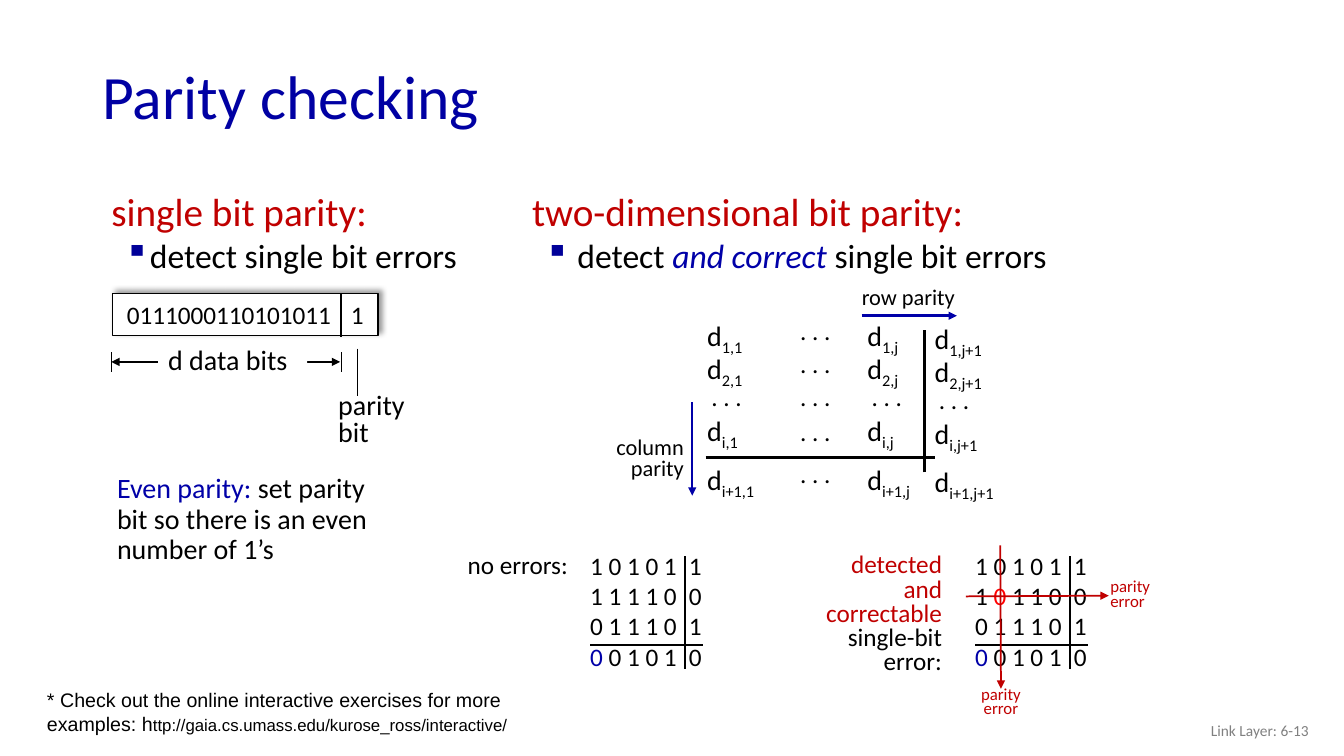
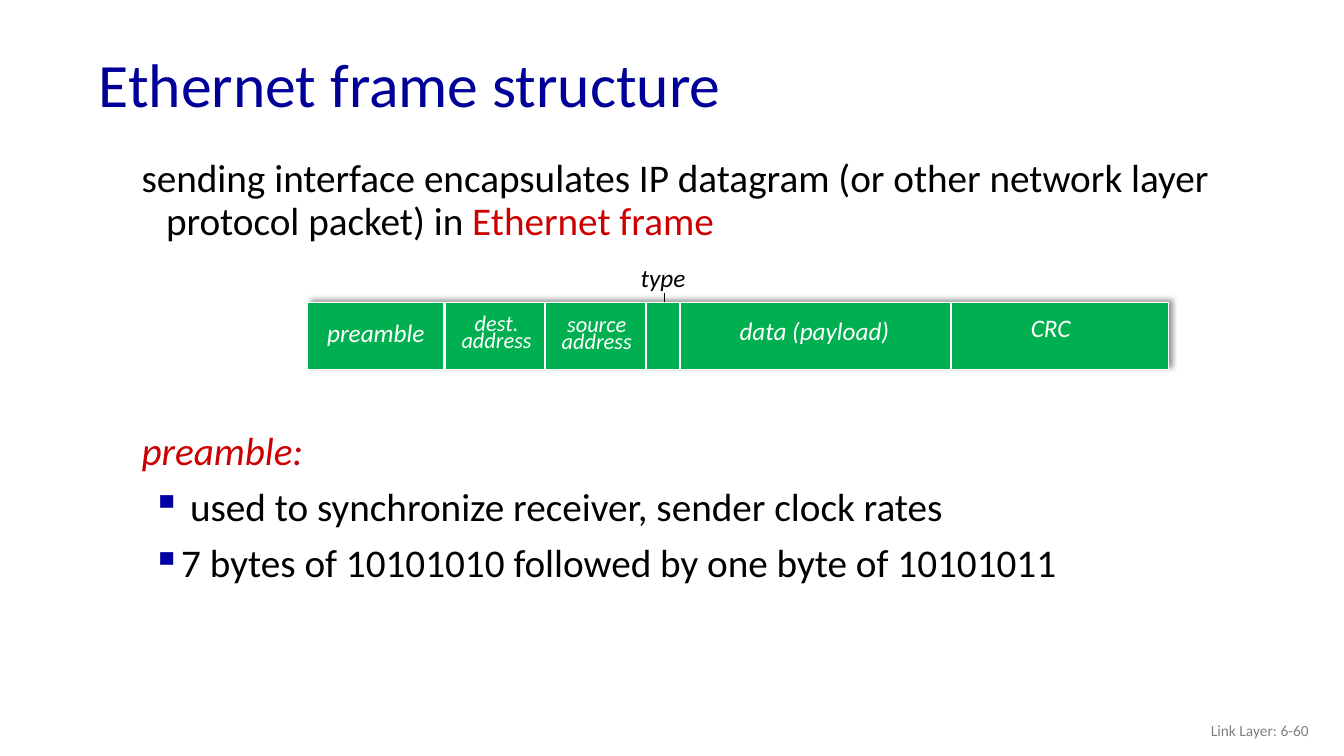
from pptx import Presentation
from pptx.dml.color import RGBColor
from pptx.enum.shapes import MSO_CONNECTOR, MSO_SHAPE
from pptx.enum.text import MSO_ANCHOR, PP_ALIGN
from pptx.oxml.ns import qn
from pptx.oxml.xmlchemy import OxmlElement
from pptx.util import Pt

STRAIGHT, RECT = MSO_CONNECTOR.STRAIGHT, MSO_SHAPE.RECTANGLE
TOP, MIDDLE = MSO_ANCHOR.TOP, MSO_ANCHOR.MIDDLE
LEFT, CENTER, RIGHT = PP_ALIGN.LEFT, PP_ALIGN.CENTER, PP_ALIGN.RIGHT

COLORS = {
    "black": "000000", "white": "FFFFFF", "gray": "808080",
    "title": "0000A3", "navy": "000099", "blue": "0000A8",
    "crimson": "C00000", "red": "CC0000", "bright": "FF0000", "green": "00B050",
}
DOTS = ". . ."


def rgb(name):
    return RGBColor.from_string(COLORS[name])


def add_xml(parent, tag, **attrs):
    el = OxmlElement(tag)
    for key, value in attrs.items():
        el.set(key, str(value))
    parent.append(el)
    return el


class Deck:
    font = "Calibri"

    def __init__(self):
        self.prs = Presentation()
        self.prs.slide_width, self.prs.slide_height = Pt(960), Pt(540)
        self.s = None

    def slide(self, title, x, y, color, number):
        self.s = self.prs.slides.add_slide(self.prs.slide_layouts[6])
        tf = self.box(x, y, 828, 70.5, MIDDLE)
        self.para(tf, title, size=44, color=color, spacing=0.9)
        tf = self.box(726, 507.5, 216, 29, MIDDLE)
        self.para(tf, f"Link Layer: {number}", size=11, color="gray", align=RIGHT)

    def box(self, x, y, w, h, anchor=TOP, fill=None):
        sp = self.s.shapes.add_textbox(Pt(x), Pt(y), Pt(w), Pt(h))
        if fill:
            sp.fill.solid()
            sp.fill.fore_color.rgb = rgb(fill)
        tf = sp.text_frame
        tf.word_wrap = True
        tf.vertical_anchor = anchor
        return tf

    def para(self, tf, *runs, size=18, color="black", italic=False, font=None,
             align=LEFT, spacing=None, before=None, indent=None, bullet=None):
        """Each run is a string, or a string with a dict of its own settings."""
        p = tf.paragraphs[0]
        if p.runs:
            p = tf.add_paragraph()
        p.alignment = align
        if spacing:
            p.line_spacing = spacing
        if before:
            p.space_before = Pt(before)
        pPr = p._p.get_or_add_pPr()
        if indent:
            pPr.set("marL", str(Pt(indent[0])))
            pPr.set("indent", str(Pt(indent[1])))
        if bullet:
            add_xml(add_xml(pPr, "a:buClr"), "a:srgbClr", val=COLORS[bullet])
            add_xml(pPr, "a:buChar", char="▪")
        for run in runs:
            text, own = (run, {}) if isinstance(run, str) else run
            r = p.add_run()
            r.text = text
            r.font.name = font or self.font
            r.font.size = Pt(own.get("size", size))
            r.font.color.rgb = rgb(own.get("color", color))
            r.font.italic = own.get("italic", italic)
            if own.get("sub"):
                r._r.get_or_add_rPr().set("baseline", "-25000")

    def label(self, x, y, w, h, *lines, fill=None, **style):
        tf = self.box(x, y, w, h, fill=fill)
        for line in lines:
            self.para(tf, line, **style)

    def line(self, x1, y1, x2, y2, color="black", width=1, head=False, tail=False):
        c = self.s.shapes.add_connector(STRAIGHT, Pt(x1), Pt(y1), Pt(x2), Pt(y2))
        c.line.color.rgb = rgb(color)
        c.line.width = Pt(width)
        spPr = c._element.spPr
        ln = spPr.find(qn("a:ln"))
        if head:
            add_xml(ln, "a:headEnd", type="triangle")
        if tail:
            add_xml(ln, "a:tailEnd", type="triangle")
        add_xml(spPr, "a:effectLst")

    def shadow_bar(self, x, y, w, h, fill, line, width):
        sp = self.s.shapes.add_shape(RECT, Pt(x), Pt(y), Pt(w), Pt(h))
        sp.fill.solid()
        sp.fill.fore_color.rgb = rgb(fill)
        sp.line.color.rgb = rgb(line)
        sp.line.width = Pt(width)
        sp.shadow.inherit = False
        effects = sp._element.spPr.find(qn("a:effectLst"))
        shadow = add_xml(effects, "a:outerShdw", blurRad=Pt(4), dist=Pt(3),
                         dir=315 * 60000, algn="bl", rotWithShape=0)
        clr = add_xml(shadow, "a:srgbClr", val=COLORS["black"])
        add_xml(clr, "a:alpha", val=40000)

    def bit_grid(self, x, y, rows, parity):
        """Data bits by row, with the parity column ruled off at the right."""
        data, check = self.box(x, y, 80, 96), self.box(x + 70.5, y, 28, 96)
        for runs, bit in zip(rows, parity):
            self.para(data, *runs)
            self.para(check, bit)
        self.line(x + 7, y + 71.5, x + 87.5, y + 71.5, width=1.5)
        self.line(x + 74.5, y + 8, x + 74.5, y + 88.5, width=1.5)


def single_bit(d):
    tf = d.box(72.5, 130.5, 290, 70.5)
    d.para(tf, "single bit parity", (":", {"color": "red"}), size=28,
           color="crimson", indent=(18.5, -18.5))
    d.para(tf, "detect single bit errors", size=24, indent=(27.5, -18), bullet="navy")

    # Data word and its parity bit
    d.shadow_bar(80.5, 209.5, 189.5, 30, "white", "black", 1)
    d.label(83.5, 210, 165, 29, "0111000110101011")
    d.label(243.5, 210, 26, 29, "1")
    d.line(243.5, 210, 243.5, 240.5)

    # Dimension line and parity pointer
    d.line(79.5, 258.5, 243, 258.5, width=1.75, head=True, tail=True)
    for x in (79.5, 243.5):
        d.line(x, 251.5, x, 265.5, width=0.5)
    d.label(113, 246, 106.5, 27.5, "d data bits", fill="white", size=20, spacing=0.8)
    d.label(234.5, 278, 106.5, 47, "parity", "bit", size=20, spacing=0.8)
    d.line(255.5, 249, 255.5, 283)

    tf = d.box(76.5, 335.5, 215, 73)
    d.para(tf, ("Even parity: ", {"color": "blue"}),
           "set parity bit so there is an even number of 1’s", size=20, spacing=0.9)


def two_dimensional(d):
    tf = d.box(373, 130.5, 420, 70.5)
    d.para(tf, "two-dimensional bit parity:", size=28, color="crimson")
    d.para(tf, " detect ", ("and correct ", {"color": "blue", "italic": True}),
           "single bit errors", size=24, indent=(22.5, -13.5), bullet="navy")

    # Matrix of bits: columns (x, drop, index), rows (y, index)
    columns = ((498, 0, "1"), (612.5, 0, "j"), (660.5, 2, "j+1"))
    rows = ((224, "1"), (247.5, "2"), (292, "i"), (326.5, "i+1"))
    for x, drop, col in columns:
        for y, row in rows:
            tf = d.box(x, y + drop, 75, 31.5)
            d.para(tf, "d", (f"{row},{col}", {"sub": True}), size=20)
        d.label(x + 3, 269 + drop, 50, 29, DOTS)
    for y in (222, 245.5, 269, 294, 324):
        d.label(564.5, y, 50, 29, DOTS)
    d.line(504, 327, 668, 327, width=2)
    d.line(660.5, 337.5, 660.5, 236, width=2)

    # Parity directions
    d.label(608.5, 198.5, 90, 26.5, "row parity", size=16)
    d.line(615.5, 225.5, 683.5, 225.5, "blue", 1.75, tail=True)
    d.label(425, 309.5, 70.5, 39, "column", "parity", size=16, align=RIGHT, spacing=0.8)
    d.line(494.5, 287.5, 494.5, 354, "blue", 1.75, tail=True)


def examples(d):
    y = 389.5
    first, third = ["1 0 1 0 1"], ["0 1 1 1 0"]
    last = [("0", {"color": "blue"}), " 0 1 0 1"]
    flipped = ["1 ", ("0", {"color": "bright"}), " 1 1 0"]

    # Without errors
    d.label(327, 389, 95, 29, "no errors:")
    d.bit_grid(414.5, y, (first, ["1 1 1 1 0"], third, last), "1010")

    # With one flipped bit
    d.bit_grid(689.5, y, (first, flipped, third, last), "1010")
    d.label(691, 489, 48, 28, "parity", "error", size=12, color="crimson",
            align=CENTER, spacing=0.7)
    d.label(786, 412, 48, 28, "parity", "error", size=12, color="crimson", spacing=0.7)
    d.line(690, 426, 792, 425.5, "crimson", 1.25, tail=True)
    d.line(714.5, 389.5, 715, 492, "crimson", 1.25, tail=True)
    tf = d.box(569, 392.5, 111, 95)
    for word in ("detected", "and", "correctable", "single-bit", "error:"):
        color = "black" if word in ("single-bit", "error:") else "crimson"
        d.para(tf, word, color=color, align=RIGHT, spacing=0.8)

    tf = d.box(26.5, 488, 355, 41)
    d.para(tf, "* Check out the online interactive exercises for more examples: h",
           ("ttp://gaia.cs.umass.edu/kurose_ross/interactive/", {"size": 12}),
           size=14, font="Arial")


def ethernet_frame(d):
    body = {"size": 28, "spacing": 0.9, "before": 10}
    tf = d.box(83.5, 110, 860, 80)
    d.para(tf, "sending interface encapsulates IP datagram (or other network layer "
           "protocol packet) in ", ("Ethernet frame", {"color": "red"}),
           indent=(28, -17.5), **body)

    # Frame with its fields
    d.line(475, 209.5, 475, 227.5, width=0.75)
    d.shadow_bar(219.5, 216, 615.5, 48, "green", "white", 0.75)
    for x in (317.5, 389.5, 461.5, 486, 679.5):
        d.line(x, 215.5, x, 264, "white", 1.5)
    fields = (
        (216, 232.5, 105, 18, ("preamble",)),
        (313, 224.5, 83.5, 16, ("dest.", "address")),
        (384.5, 225.5, 83.5, 16, ("source", "address")),
        (514, 231, 135.5, 18, ("data (payload)",)),
        (708.5, 229.5, 84, 18, ("CRC",)),
    )
    for x, y, w, size, lines in fields:
        d.label(x, y, w, 7 + 12 * len(lines), *lines, size=size, color="white",
                italic=True, align=CENTER, spacing=Pt(12))
    d.label(450.5, 183.5, 75.5, 26, "type", italic=True)

    # Preamble notes
    tf = d.box(83.5, 304.5, 860, 130)
    d.para(tf, "preamble:", color="red", italic=True, indent=(28, -17.5), **body)
    for note in (" used to synchronize receiver, sender clock rates",
                 "7 bytes of 10101010 followed by one byte of 10101011"):
        d.para(tf, note, indent=(36.5, -18.5), bullet="title", **body)


def main():
    d = Deck()
    d.slide("Parity checking", 66, 35.5, "title", "6-13")
    single_bit(d)
    two_dimensional(d)
    examples(d)
    d.slide("Ethernet frame structure", 63.5, 27.5, "navy", "6-60")
    ethernet_frame(d)
    d.prs.save("out.pptx")


if __name__ == "__main__":
    main()
